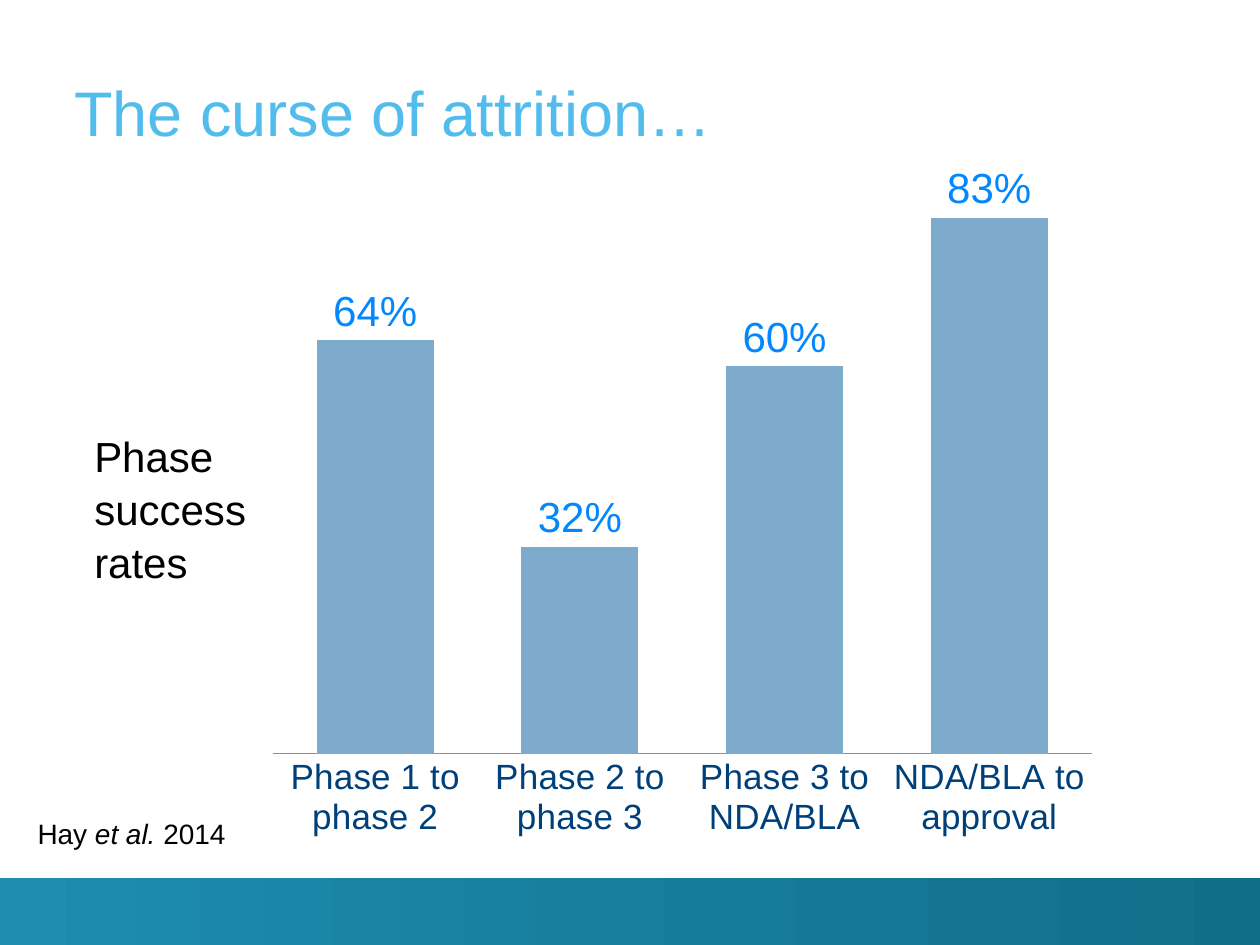
"""Build a slide with a column chart of success rates by clinical phase."""
from lxml import etree
from pptx import Presentation
from pptx import util as u
from pptx.chart import data as chart_data
from pptx.dml.color import RGBColor
from pptx.enum import chart as chart_enum, shapes, text
from pptx.oxml import ns

FONT = "Arial"
COLORS = {
    "title": "52BDEC", "text": "000000", "white": "FFFFFF",
    "band_start": "1D8DB0", "band_end": "116E8A",
    "bar": "7EABCC", "value": "0387FF", "category": "00407A", "axis": "8093AD",
}


def color(name):
    return RGBColor.from_string(COLORS[name])


def style_font(font, size, color_name):
    font.name = FONT
    font.size = u.Pt(size)
    font.color.rgb = color(color_name)


presentation = Presentation()
presentation.slide_width, presentation.slide_height = u.Pt(720), u.Pt(540)
slide = presentation.slides.add_slide(presentation.slide_layouts[5])

band = slide.shapes.add_shape(
    shapes.MSO_SHAPE.RECTANGLE, u.Pt(0), u.Pt(501.8), u.Pt(720), u.Pt(38.2))
band.shadow.inherit = False
band.line.fill.background()
band.fill.gradient()
band.fill.gradient_angle = 0
for stop, name in zip(band.fill.gradient_stops, ("band_start", "band_end")):
    stop.color.rgb = color(name)

title = slide.shapes.title
title.left, title.top = u.Pt(42.5), u.Pt(14.4)
title.width, title.height = u.Pt(656), u.Pt(70.6)
frame = title.text_frame
frame.margin_left = frame.margin_top = frame.margin_right = frame.margin_bottom = 0
frame.vertical_anchor = text.MSO_ANCHOR.BOTTOM
frame.auto_size = text.MSO_AUTO_SIZE.NONE
paragraph = frame.paragraphs[0]
paragraph.alignment = text.PP_ALIGN.LEFT
run = paragraph.add_run()
run.text = "The curse of attrition…"
style_font(run.font, 36, "title")

source = slide.shapes.add_textbox(u.Pt(14.4), u.Pt(463), u.Pt(139), u.Pt(26.6))
source.fill.solid()
source.fill.fore_color.rgb = color("white")
source.text_frame.word_wrap = True
for words, italic in (("Hay ", False), ("et al.", True), (" 2014", False)):
    run = source.text_frame.paragraphs[0].add_run()
    run.text = words
    style_font(run.font, 16, "text")
    run.font.italic = italic

rates = chart_data.CategoryChartData(number_format='0"%"')
rates.categories = ["Phase 1 to phase 2", "Phase 2 to phase 3",
                    "Phase 3 to NDA/BLA", "NDA/BLA to approval"]
rates.add_series("Series 1", (64, 32, 60, 83))
chart = slide.shapes.add_chart(
    chart_enum.XL_CHART_TYPE.COLUMN_CLUSTERED,
    u.Pt(146.2), u.Pt(90.7), u.Pt(487.4), u.Pt(395.3), rates).chart
chart.has_legend = chart.has_title = False
style_font(chart.font, 18, "value")

category_axis = chart.category_axis
category_axis.major_tick_mark = chart_enum.XL_TICK_MARK.NONE
category_axis.format.line.color.rgb = color("axis")
category_axis.format.line.width = u.Pt(0.75)
style_font(category_axis.tick_labels.font, 20, "category")
value_axis = chart.value_axis
value_axis.minimum_scale, value_axis.maximum_scale = 0, 90
value_axis.has_major_gridlines = False
value_axis.visible = False

plot = chart.plots[0]
plot.gap_width = 75
plot.vary_by_categories = False
bars = plot.series[0].format
bars.fill.solid()
bars.fill.fore_color.rgb = color("bar")
plot.has_data_labels = True
labels = plot.data_labels
labels.show_value = True
labels.number_format = '0"%"'
labels.number_format_is_linked = False
labels.position = chart_enum.XL_LABEL_POSITION.OUTSIDE_END
style_font(labels.font, 24, "value")

plot_area = plot_area = chart.element.find(".//" + ns.qn("c:plotArea"))
for old_layout in plot_area.findall(ns.qn("c:layout")):
    plot_area.remove(old_layout)
layout = etree.Element(ns.qn("c:layout"))
plot_area.insert(0, layout)
manual = etree.SubElement(layout, ns.qn("c:manualLayout"))
for tag, value in (("layoutTarget", "inner"), ("xMode", "edge"), ("yMode", "edge"),
                   ("x", "0.02"), ("y", "0.02"), ("w", "0.96"), ("h", "0.84")):
    etree.SubElement(manual, ns.qn("c:" + tag)).set("val", value)

caption = slide.shapes.add_textbox(u.Pt(46.8), u.Pt(241.2), u.Pt(131.8), u.Pt(94.3))
caption.text_frame.word_wrap = True
paragraph = caption.text_frame.paragraphs[0]
paragraph.line_spacing = 1.05
run = paragraph.add_run()
run.text = "Phase success rates"
style_font(run.font, 24, "text")

presentation.save("out.pptx")
